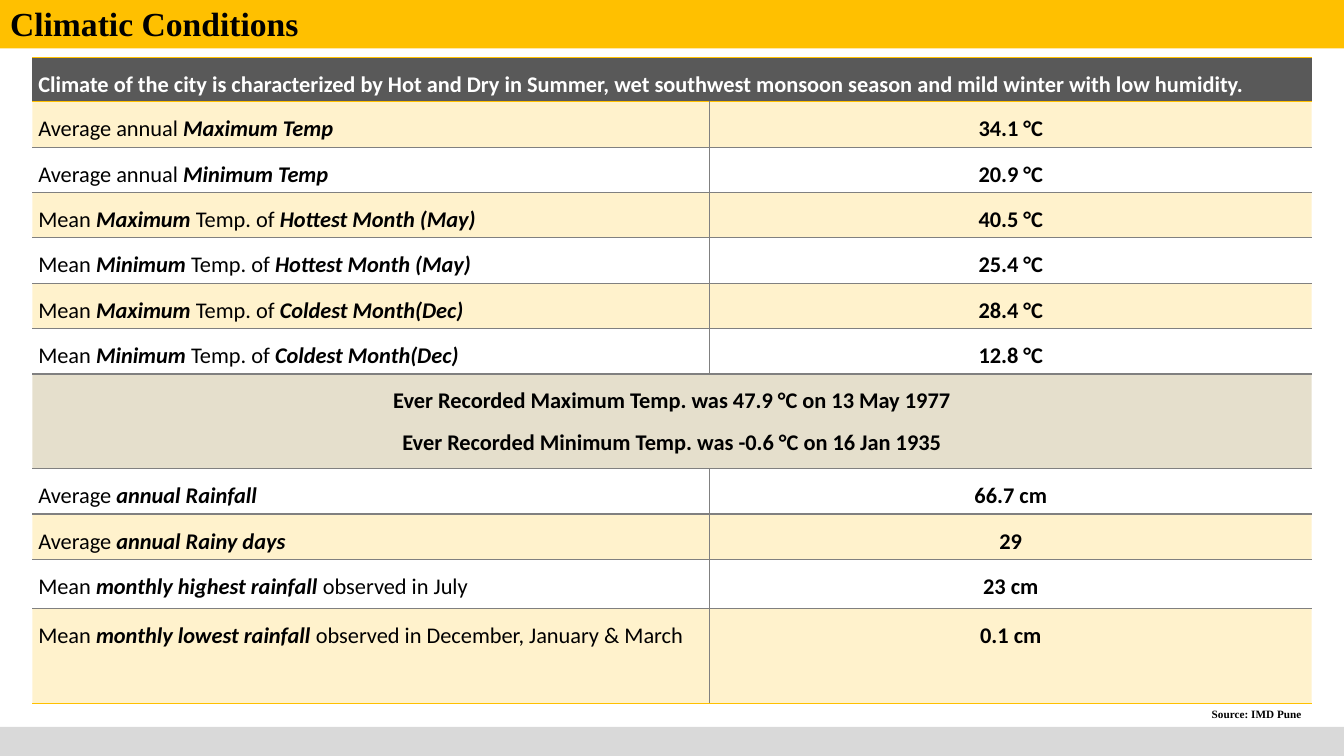
from dataclasses import dataclass

from lxml import etree
from pptx import Presentation
from pptx.dml.color import RGBColor
from pptx.enum.shapes import MSO_SHAPE
from pptx.enum.text import MSO_ANCHOR, MSO_AUTO_SIZE, PP_ALIGN
from pptx.oxml.ns import qn
from pptx.util import Inches, Pt

RECT = MSO_SHAPE.RECTANGLE
LEFT, CENTER, JUSTIFY = PP_ALIGN.LEFT, PP_ALIGN.CENTER, PP_ALIGN.JUSTIFY

# Content: asterisks enclose bold italic words
TITLE = "Climatic Conditions"
SOURCE = "Source: IMD Pune"
SUMMARY = ("Climate of the city is characterized by Hot and Dry in Summer, wet southwest "
           "monsoon season and mild winter with low humidity.")
TEMPERATURES = [
    ("Average annual *Maximum Temp*", "34.1 °C"),
    ("Average annual *Minimum Temp*", "20.9 °C"),
    ("Mean *Maximum* Temp. of *Hottest Month (May)*", "40.5 °C"),
    ("Mean *Minimum* Temp. of *Hottest Month (May)*", "25.4 °C"),
    ("Mean *Maximum* Temp. of *Coldest Month(Dec)*", "28.4 °C"),
    ("Mean *Minimum* Temp. of *Coldest Month(Dec)*", "12.8 °C"),
]
RECORDS = ["Ever Recorded Maximum Temp. was 47.9 °C on 13 May 1977",
           "Ever Recorded Minimum Temp. was -0.6 °C on 16 Jan 1935"]
RAINFALL = [
    ("Average *annual Rainfall*", "66.7 cm"),
    ("Average *annual Rainy days*", "29"),
    ("Mean *monthly highest rainfall* observed in July", "23 cm"),
    ("Mean *monthly lowest rainfall* observed in December, January & March", "0.1 cm"),
]


@dataclass(frozen=True)
class Theme:
    gold: str = "FFC000"
    olive: str = "806000"
    dark: str = "595959"
    rule: str = "808080"
    footer: str = "D9D9D9"
    black: str = "000000"
    white: str = "FFFFFF"
    heading_font: str = "Times New Roman"
    body_font: str = "Calibri"
    title_size: int = 24
    body_size: int = 16
    source_size: int = 8
    tint: int = 20


T = Theme()
SLIDE_W, SLIDE_H = 13.33, 7.5
TITLE_H, FOOTER_H = 0.48, 0.29
TABLE_X, TABLE_Y = 0.32, 0.57
COLS = [6.72, 5.97]
HEADER_H, ROW_H, JULY_H, TALL_H = 0.44, 0.45, 0.49, 0.94
ROWS = [HEADER_H] + [ROW_H] * 6 + [TALL_H] + [ROW_H] * 2 + [JULY_H, TALL_H]
RECORD_ROW = 1 + len(TEMPERATURES)


def fill_with(fill, color, alpha=100):
    fill.solid()
    fill.fore_color.rgb = RGBColor.from_string(color)
    if alpha < 100:
        clr = fill._xPr.find(qn("a:solidFill")).find(qn("a:srgbClr"))
        etree.SubElement(clr, qn("a:alpha"), val=str(alpha * 1000))


def style(p, font, size, color, bold=None, align=LEFT, spacing=1.0):
    p.alignment, p.line_spacing = align, spacing
    p.font.name, p.font.size, p.font.bold = font, Pt(size), bold
    p.font.color.rgb = RGBColor.from_string(color)


def set_borders(cell, **sides):
    """Draw the sides in schema order; None leaves a side without a line."""
    tc_pr = cell._tc.get_or_add_tcPr()
    for side in ("L", "R", "T", "B"):
        ln = etree.SubElement(tc_pr, qn("a:ln" + side), w=str(Pt(1)))
        if sides.get(side):
            solid = etree.SubElement(ln, qn("a:solidFill"))
            etree.SubElement(solid, qn("a:srgbClr"), val=sides[side])
        else:
            etree.SubElement(ln, qn("a:noFill"))


def write_cell(cell, lines, align, color=T.black, bold=True):
    cell.margin_left = cell.margin_right = Inches(0.06)
    cell.margin_top = cell.margin_bottom = 0
    tf = cell.text_frame
    for i, line in enumerate(lines):
        p = tf.paragraphs[0] if i == 0 else tf.add_paragraph()
        style(p, T.body_font, T.body_size, color, bold, align, 1.5)
        for j, part in enumerate(line.split("*")):
            if part:
                r = p.add_run()
                r.text = part
                if j % 2:
                    r.font.bold = r.font.italic = True


prs = Presentation()
prs.slide_width, prs.slide_height = Inches(SLIDE_W), Inches(SLIDE_H)
s = prs.slides.add_slide(prs.slide_layouts[5])

# Title band
title = s.shapes.title
title.left, title.top = 0, 0
title.width, title.height = Inches(SLIDE_W), Inches(TITLE_H)
fill_with(title.fill, T.gold)
tf = title.text_frame
tf.text = TITLE
tf.auto_size = MSO_AUTO_SIZE.NONE
tf.vertical_anchor = MSO_ANCHOR.BOTTOM
style(tf.paragraphs[0], T.heading_font, T.title_size, T.black, True, spacing=0.9)

# Footer band
sp = s.shapes.add_shape(RECT, 0, Inches(SLIDE_H - FOOTER_H), Inches(SLIDE_W), Inches(FOOTER_H))
sp.shadow.inherit = False
fill_with(sp.fill, T.footer)
sp.line.fill.background()

# Climate table
table = s.shapes.add_table(len(ROWS), len(COLS), Inches(TABLE_X), Inches(TABLE_Y),
                           Inches(sum(COLS)), Inches(sum(ROWS))).table
table.first_row = table.horz_banding = False
for column, width in zip(table.columns, COLS):
    column.width = Inches(width)
for row, height in zip(table.rows, ROWS):
    row.height = Inches(height)

# Borders and fills: gold around the header and at the foot, grey between rows
rules = [T.gold] * 2 + [T.rule] * (len(ROWS) - 2) + [T.gold]
for i in range(len(ROWS)):
    merged = i in (0, RECORD_ROW)
    divider = None if merged else T.rule
    for j in range(len(COLS)):
        cell = table.cell(i, j)
        set_borders(cell, T=rules[i], B=rules[i + 1],
                    L=divider if j else None, R=None if j else divider)
        if i == 0:
            fill_with(cell.fill, T.dark)
        elif i == RECORD_ROW:
            fill_with(cell.fill, T.olive, T.tint)
        elif i % 2:
            fill_with(cell.fill, T.gold, T.tint)
        else:
            cell.fill.background()
    if merged:
        table.cell(i, 0).merge(table.cell(i, 1))

# Table text
write_cell(table.cell(0, 0), [SUMMARY], JUSTIFY, T.white)
write_cell(table.cell(RECORD_ROW, 0), RECORDS, CENTER)
for first, measures in ((1, TEMPERATURES), (RECORD_ROW + 1, RAINFALL)):
    for i, (label, value) in enumerate(measures, first):
        write_cell(table.cell(i, 0), [label], JUSTIFY, bold=False)
        write_cell(table.cell(i, 1), [value], CENTER)

# Source note
tf = s.shapes.add_textbox(Inches(11.92), Inches(6.97), Inches(1.1), Inches(0.24)).text_frame
tf.word_wrap = False
tf.auto_size = MSO_AUTO_SIZE.SHAPE_TO_FIT_TEXT
tf.text = SOURCE
style(tf.paragraphs[0], T.heading_font, T.source_size, T.black, True)

prs.save("out.pptx")
